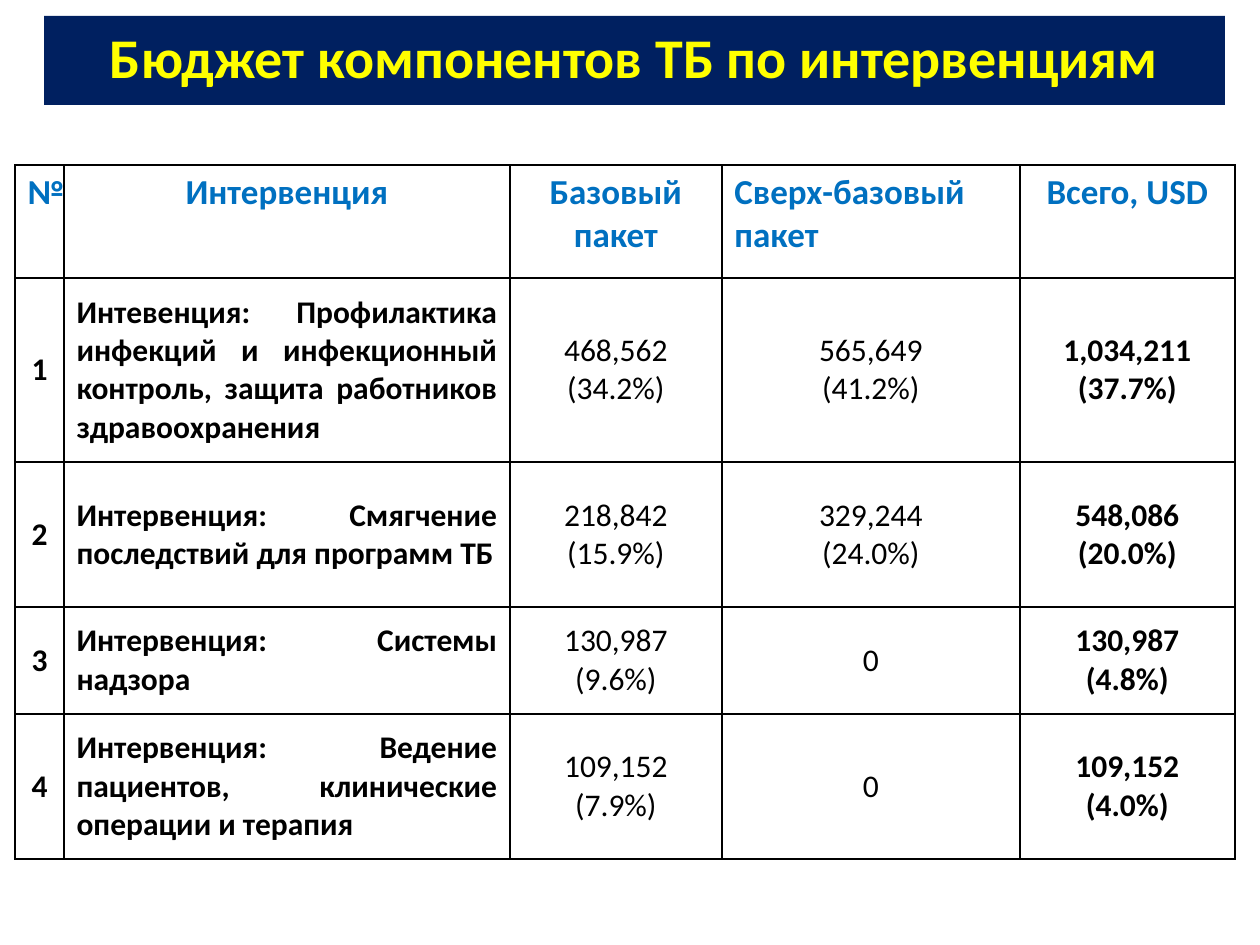
from dataclasses import dataclass

from lxml import etree
from pptx import Presentation
from pptx.dml.color import RGBColor
from pptx.enum.shapes import MSO_SHAPE
from pptx.enum.text import MSO_ANCHOR, PP_ALIGN
from pptx.oxml.ns import qn
from pptx.util import Pt

RECTANGLE = MSO_SHAPE.RECTANGLE
TOP, MIDDLE = MSO_ANCHOR.TOP, MSO_ANCHOR.MIDDLE
CENTER, JUSTIFY = PP_ALIGN.CENTER, PP_ALIGN.JUSTIFY

TITLE = "Бюджет компонентов ТБ по интервенциям"
HEADINGS = ("№", "Интервенция", "Базовый пакет", "Сверх-базовый пакет", "Всего, USD")
INTERVENTIONS = [
    ("1", "Интевенция: Профилактика инфекций и инфекционный контроль, защита работников здравоохранения",
     "468,562\n(34.2%)", "565,649\n(41.2%)", "1,034,211\n(37.7%)"),
    ("2", "Интервенция: Смягчение последствий для программ ТБ",
     "218,842\n(15.9%)", "329,244\n(24.0%)", "548,086\n(20.0%)"),
    ("3", "Интервенция: Системы надзора",
     "130,987\n(9.6%)", "0", "130,987\n(4.8%)"),
    ("4", "Интервенция: Ведение пациентов, клинические операции и терапия",
     "109,152\n(7.9%)", "0", "109,152\n(4.0%)"),
]


@dataclass(frozen=True)
class Theme:
    font: str = "Calibri"
    banner: str = "002060"
    title: str = "FFFF00"
    heading: str = "0070C0"
    body: str = "000000"
    border: str = "000000"
    border_width: int = 1
    title_size: int = 32
    heading_size: int = 20
    body_size: int = 18


THEME = Theme()
SCALE = 914400 / 126
SLIDE_SIZE = (1260, 945)
BANNER_BOX = (44, 16, 1181, 89)
TABLE_ORIGIN = (15, 165)
COLUMN_WIDTHS = (49, 446, 212, 298, 215)
ROW_HEIGHTS = (113, 184, 145, 107, 145)
BOLD_COLUMNS = (0, 1, 4)

TITLE_FORMAT = {"size": Pt(THEME.title_size), "name": THEME.font, "bold": True}
HEADING_FORMAT = {"size": Pt(THEME.heading_size), "name": THEME.font, "bold": True}
BODY_FORMAT = {"size": Pt(THEME.body_size), "name": THEME.font}


def px(length):
    return round(length * SCALE)


def write(frame, text, font_format, color, align, line_spacing=None):
    frame.text = text
    for paragraph in frame.paragraphs:
        paragraph.alignment = align
        paragraph.line_spacing = line_spacing
        font = paragraph.runs[0].font
        for attribute, value in font_format.items():
            setattr(font, attribute, value)
        font.color.rgb = RGBColor.from_string(color)


def outline(cell):
    properties = cell._tc.get_or_add_tcPr()
    for position, side in enumerate(("a:lnL", "a:lnR", "a:lnT", "a:lnB")):
        line = etree.Element(qn(side), w=str(Pt(THEME.border_width)))
        fill = etree.SubElement(line, qn("a:solidFill"))
        etree.SubElement(fill, qn("a:srgbClr"), val=THEME.border)
        properties.insert(position, line)


def add_banner(slide):
    banner = slide.shapes.add_shape(RECTANGLE, *map(px, BANNER_BOX))
    banner.shadow.inherit = False
    banner.fill.solid()
    banner.fill.fore_color.rgb = RGBColor.from_string(THEME.banner)
    banner.line.fill.background()
    banner.text_frame.word_wrap = True
    banner.text_frame.vertical_anchor = MIDDLE
    write(banner.text_frame, TITLE, TITLE_FORMAT, THEME.title, CENTER, 0.9)


def add_budget(slide):
    rows = [HEADINGS, *INTERVENTIONS]
    size = (sum(COLUMN_WIDTHS), sum(ROW_HEIGHTS))
    budget = slide.shapes.add_table(
        len(rows), len(HEADINGS), *map(px, TABLE_ORIGIN + size)).table
    budget.first_row = budget.horz_banding = False
    for column, width in zip(budget.columns, COLUMN_WIDTHS):
        column.width = px(width)
    for row, height in zip(budget.rows, ROW_HEIGHTS):
        row.height = px(height)

    for r, texts in enumerate(rows):
        for c, text in enumerate(texts):
            cell = budget.cell(r, c)
            cell.fill.background()
            outline(cell)
            if r == 0:
                cell.vertical_anchor = TOP
                align = JUSTIFY if c == 3 else CENTER
                write(cell.text_frame, text, HEADING_FORMAT, THEME.heading, align)
            else:
                cell.vertical_anchor = MIDDLE
                align = JUSTIFY if c == 1 else CENTER
                body_format = {**BODY_FORMAT, "bold": c in BOLD_COLUMNS}
                write(cell.text_frame, text, body_format, THEME.body, align)


def main():
    deck = Presentation()
    deck.slide_width, deck.slide_height = map(px, SLIDE_SIZE)
    slide = deck.slides.add_slide(deck.slide_layouts[6])
    add_banner(slide)
    add_budget(slide)
    deck.save("out.pptx")


if __name__ == "__main__":
    main()
